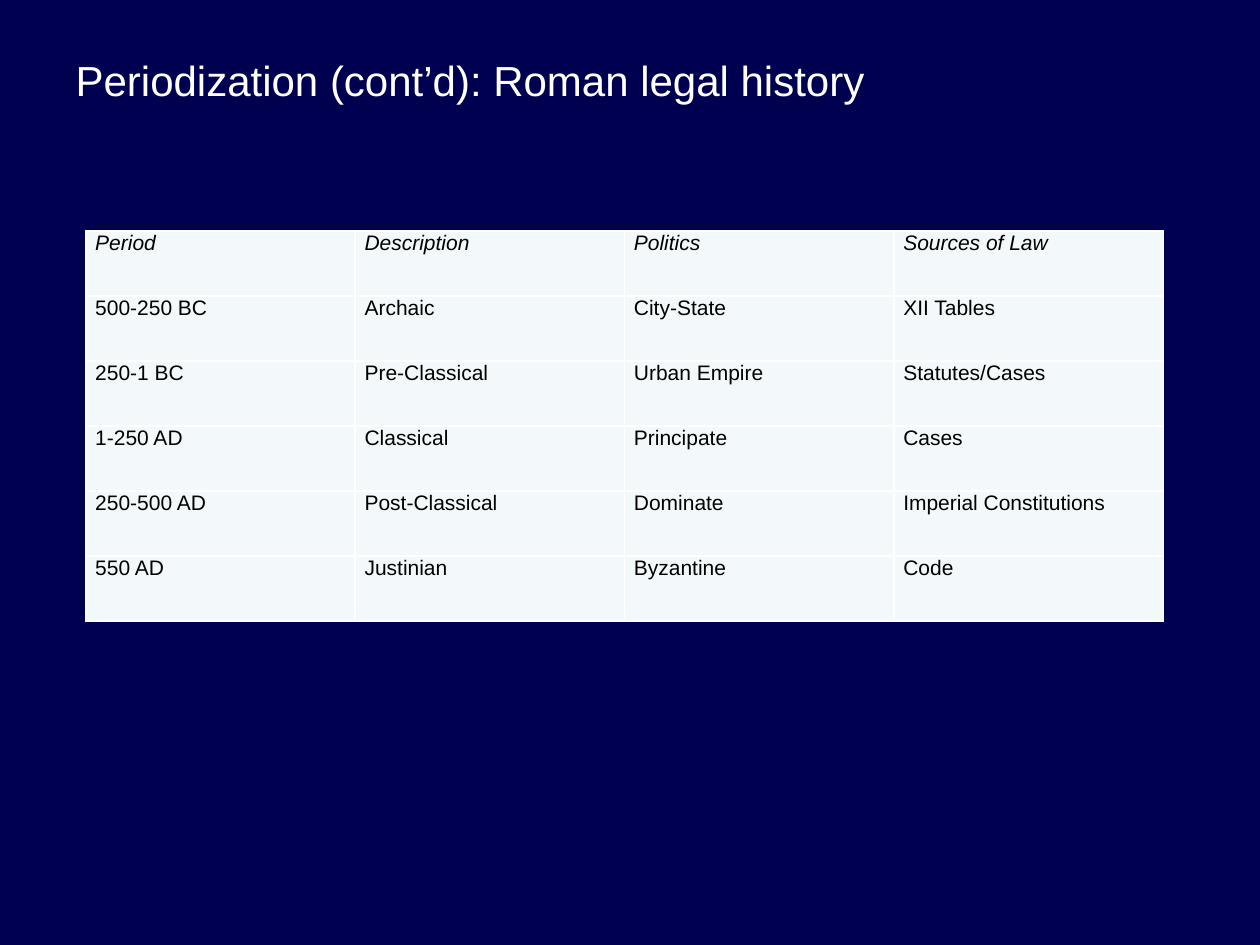
from dataclasses import dataclass

from lxml.etree import SubElement
from pptx import Presentation
from pptx.dml.color import RGBColor
from pptx.enum.text import MSO_ANCHOR, PP_ALIGN
from pptx.oxml.ns import qn
from pptx.util import Cm, Pt

NAVY, WHITE, PALE, BLACK = "000050", "FFFFFF", "F3F9FA", "000000"


@dataclass
class Era:
    period: str
    label: str
    rule: str
    law: str

    def cells(self) -> list[str]:
        return [self.period, self.label, self.rule, self.law]


HEAD = Era("Period", "Description", "Politics", "Sources of Law")
ERAS = [
    Era("500-250 BC", "Archaic", "City-State", "XII Tables"),
    Era("250-1 BC", "Pre-Classical", "Urban Empire", "Statutes/Cases"),
    Era("1-250 AD", "Classical", "Principate", "Cases"),
    Era("250-500 AD", "Post-Classical", "Dominate", "Imperial Constitutions"),
    Era("550 AD", "Justinian", "Byzantine", "Code"),
]


def paint(target, color: str) -> None:
    target.solid()
    target.fore_color.rgb = RGBColor.from_string(color)


def style(para, size: int, color: str, italic: bool = False) -> None:
    para.alignment = PP_ALIGN.LEFT
    font = para.font
    font.name = "Arial"
    font.size = Pt(size)
    font.bold = False
    font.italic = italic
    paint(font.fill, color)


def edge(cell, color: str, width: int) -> None:
    props = cell._tc.get_or_add_tcPr()
    for side in ("lnL", "lnR", "lnT", "lnB"):
        line = SubElement(props, qn(f"a:{side}"), w=str(Pt(width)))
        fill = SubElement(line, qn("a:solidFill"))
        SubElement(fill, qn("a:srgbClr"), val=color)


def draw_cell(cell, text: str, italic: bool) -> None:
    cell.text = text
    cell.vertical_anchor = MSO_ANCHOR.TOP
    cell.margin_left = cell.margin_right = Cm(0.19)
    cell.margin_top = cell.margin_bottom = 0
    edge(cell, WHITE, 1)
    paint(cell.fill, PALE)
    para = cell.text_frame.paragraphs[0]
    para.space_after = Pt(5)
    style(para, 12, BLACK, italic)


def draw_title(title, text: str) -> None:
    title.left, title.top = Cm(1.27), Cm(0.86)
    title.width, title.height = Cm(24.13), Cm(1.9)
    frame = title.text_frame
    frame.text = text
    frame.vertical_anchor = MSO_ANCHOR.TOP
    frame.margin_top = Cm(0.23)
    style(frame.paragraphs[0], 24, WHITE)


def draw_table(slide, rows: list[Era]) -> None:
    wide, high = Cm(5.43), Cm(1.31)
    cols = len(HEAD.cells())
    table = slide.shapes.add_table(
        len(rows), cols, Cm(1.73), Cm(4.66), wide * cols, high * len(rows)
    ).table
    table.horz_banding = False
    for col in table.columns:
        col.width = wide
    for r, era in enumerate(rows):
        table.rows[r].height = high
        for c, text in enumerate(era.cells()):
            draw_cell(table.cell(r, c), text, italic=r == 0)


def main() -> None:
    deck = Presentation()
    deck.slide_width, deck.slide_height = Cm(25.4), Cm(19.05)
    slide = deck.slides.add_slide(deck.slide_layouts[5])
    paint(slide.background.fill, NAVY)
    draw_title(slide.shapes.title, "Periodization (cont’d): Roman legal history")
    draw_table(slide, [HEAD, *ERAS])
    deck.save("out.pptx")


if __name__ == "__main__":
    main()
